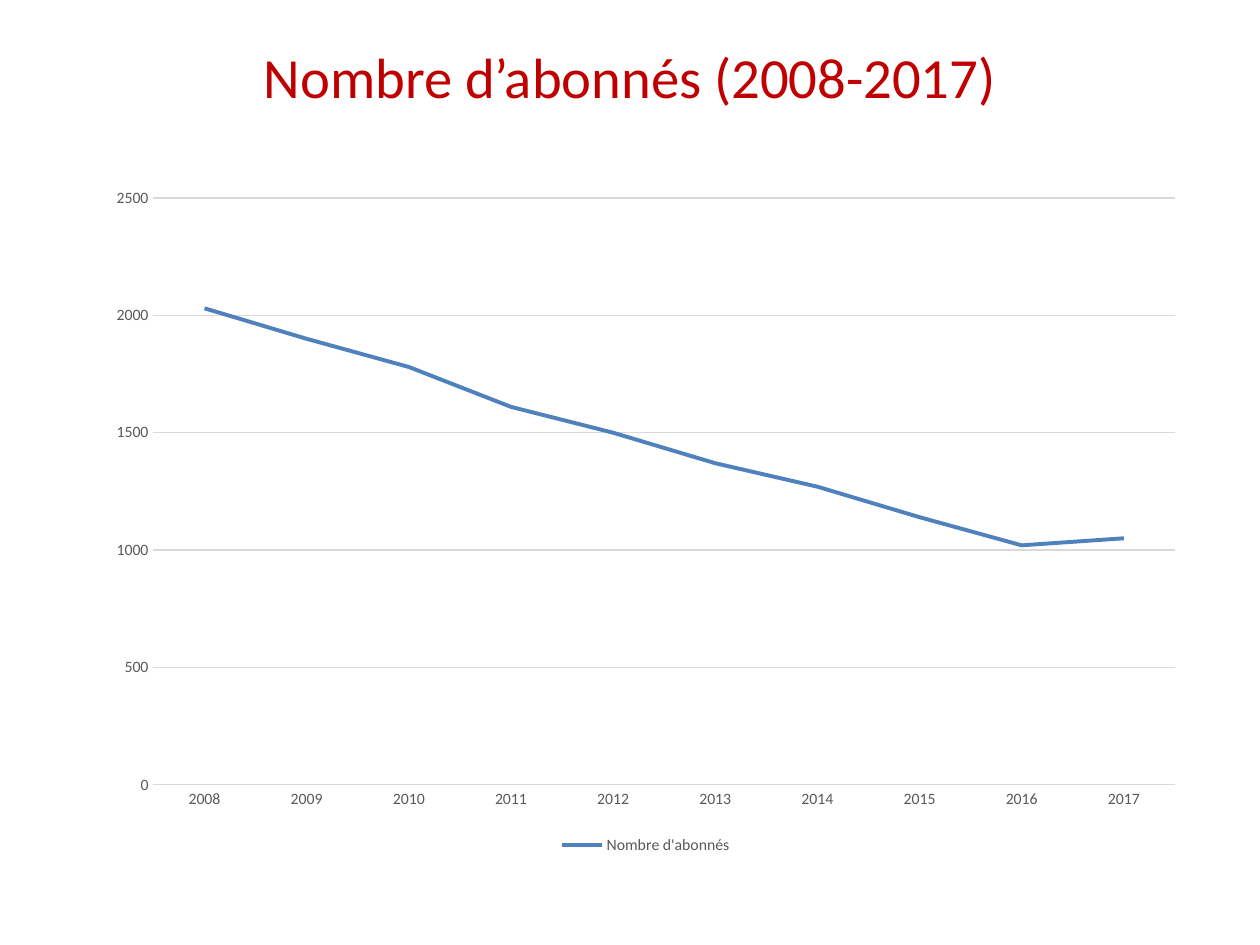
from pptx import Presentation
from pptx.chart.data import CategoryChartData
from pptx.dml.color import RGBColor
from pptx.enum.chart import XL_CHART_TYPE, XL_LEGEND_POSITION, XL_TICK_MARK
from pptx.enum.text import MSO_ANCHOR, MSO_AUTO_SIZE, PP_ALIGN
from pptx.util import Inches, Pt

# Content
TITLE = "Nombre d’abonnés (2008-2017)"
SERIES_NAME = "Nombre d'abonnés"
FIRST_YEAR = 2008
SUBSCRIBERS = [2030, 1900, 1780, 1610, 1500, 1370, 1270, 1140, 1020, 1050]

# Style
FONT = "Calibri"
COLORS = {"title": "C00000", "label": "595959", "grid": "D9D9D9", "series": "4F81BD"}
TITLE_BOX = (0.5, 0.3, 9, 0.61)
CHART_BOX = (0.75, 1.39, 8.75, 5.43)


def color(name):
    return RGBColor.from_string(COLORS[name])


def set_font(font, size, color_name):
    font.name = FONT
    font.size = Pt(size)
    font.bold = False
    font.color.rgb = color(color_name)


def set_line(line, width, color_name):
    line.width = Pt(width)
    line.color.rgb = color(color_name)


presentation = Presentation()
presentation.slide_width, presentation.slide_height = Inches(10), Inches(7.5)
slide = presentation.slides.add_slide(presentation.slide_layouts[5])

# Title
title = slide.shapes.title
title.left, title.top, title.width, title.height = map(Inches, TITLE_BOX)
title.text_frame.text = TITLE
title.text_frame.auto_size = MSO_AUTO_SIZE.NONE
title.text_frame.vertical_anchor = MSO_ANCHOR.MIDDLE
paragraph = title.text_frame.paragraphs[0]
paragraph.alignment = PP_ALIGN.CENTER
set_font(paragraph.font, 32.4, "title")

# Line chart
chart_data = CategoryChartData()
chart_data.categories = [str(FIRST_YEAR + i) for i in range(len(SUBSCRIBERS))]
chart_data.add_series(SERIES_NAME, SUBSCRIBERS)
chart = slide.shapes.add_chart(
    XL_CHART_TYPE.LINE, *map(Inches, CHART_BOX), chart_data).chart
chart.has_title = False
set_font(chart.font, 9, "label")

series = chart.plots[0].series[0]
series.smooth = False
set_line(series.format.line, 2.25, "series")

# Axes
category_axis, value_axis = chart.category_axis, chart.value_axis
for axis in (category_axis, value_axis):
    axis.major_tick_mark = axis.minor_tick_mark = XL_TICK_MARK.NONE
    set_font(axis.tick_labels.font, 9, "label")
set_line(category_axis.format.line, 0.75, "grid")
value_axis.format.line.fill.background()
value_axis.minimum_scale, value_axis.maximum_scale = 0, 2500
value_axis.major_unit = 500
set_line(value_axis.major_gridlines.format.line, 0.75, "grid")

# Legend
chart.has_legend = True
chart.legend.position = XL_LEGEND_POSITION.BOTTOM
chart.legend.include_in_layout = False
set_font(chart.legend.font, 9, "label")

presentation.save("out.pptx")
